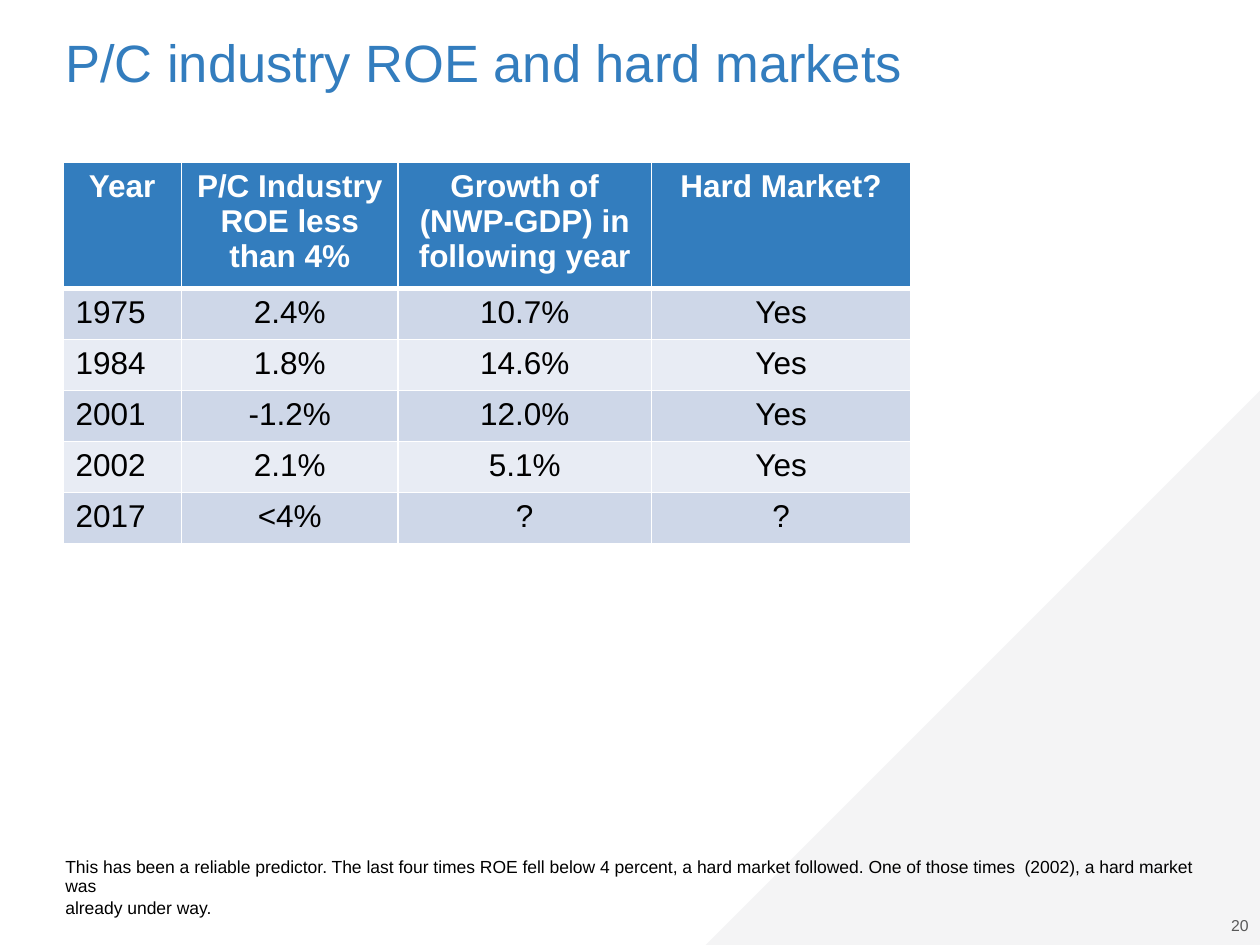
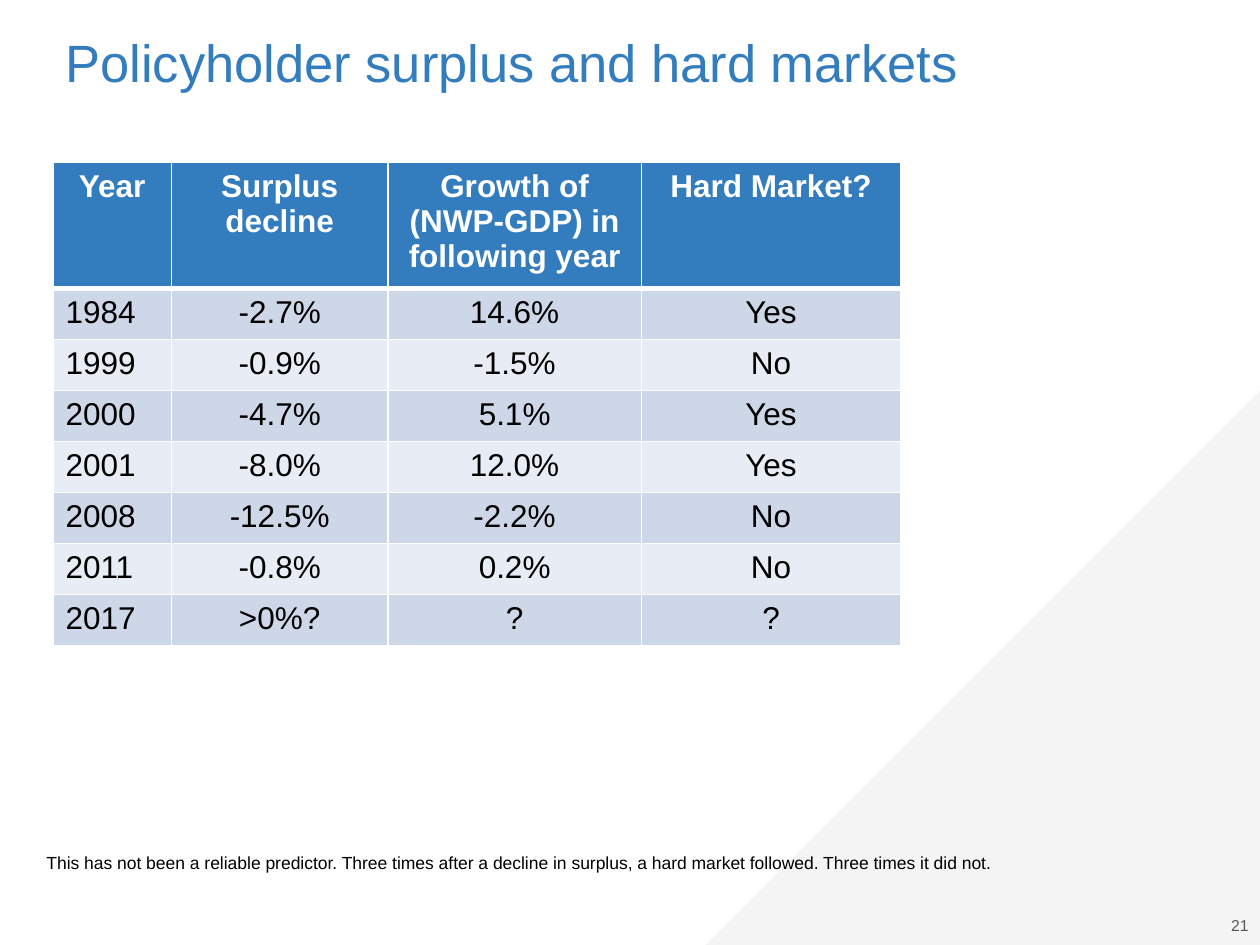
from lxml.etree import SubElement
from pptx import Presentation
from pptx.dml.color import RGBColor
from pptx.enum.shapes import MSO_SHAPE as Shape
from pptx.enum.text import MSO_ANCHOR as Anchor, PP_ALIGN as Align
from pptx.oxml import parse_xml
from pptx.oxml.ns import nsdecls, qn
from pptx.util import Inches, Pt

BLUE = RGBColor(0x33, 0x7D, 0xBE)
BAND_DARK = RGBColor(0xCE, 0xD7, 0xE8)
BAND_LIGHT = RGBColor(0xE8, 0xEC, 0xF4)
CORNER_GRAY = RGBColor(0xC6, 0xC6, 0xC9)
NUMBER_GRAY = RGBColor(0x40, 0x40, 0x40)
WHITE = RGBColor(0xFF, 0xFF, 0xFF)
BLACK = RGBColor(0, 0, 0)

TITLE = {"size": Pt(30), "color": BLUE}
NOTE = {"size": Pt(10), "color": BLACK}
NUMBER = {"size": Pt(9), "color": NUMBER_GRAY}
HEADER_CELL = {"size": Pt(18), "color": WHITE, "bold": True}
BODY_CELL = {"size": Pt(18), "color": BLACK, "bold": False}

TITLE_BOX = (0.42, 0.25, 9.25, 1.04)
NUMBER_BOX = (9.43, 7.29, 0.48, 0.13)
CORNER_BOX = (5.6, 3.1, 4.4, 4.4)
COLUMN_WIDTHS = (0.94, 1.72, 2.01, 2.06)
HEADER_HEIGHT = Inches(0.92)
ROW_HEIGHT = Inches(0.81) // 2

SLIDES = [
    {
        "number": "20",
        "title": "P/C industry ROE and hard markets",
        "table_at": (0.5, 1.29),
        "measure": "P/C Industry ROE less than 4%",
        "rows": [
            ("1975", "2.4%", "10.7%", "Yes"),
            ("1984", "1.8%", "14.6%", "Yes"),
            ("2001", "-1.2%", "12.0%", "Yes"),
            ("2002", "2.1%", "5.1%", "Yes"),
            ("2017", "<4%", "?", "?"),
        ],
        "note_box": (0.42, 6.76, 9.39, 0.45),
        "note": [
            "This has been a reliable predictor. The last four times ROE fell below 4 percent, "
            "a hard market followed. One of those times  (2002), a hard market was",
            "already under way.",
        ],
        "note_gap": Pt(2),
    },
    {
        "number": "21",
        "title": "Policyholder surplus and hard markets",
        "table_at": (0.42, 1.29),
        "measure": "Surplus decline",
        "rows": [
            ("1984", "-2.7%", "14.6%", "Yes"),
            ("1999", "-0.9%", "-1.5%", "No"),
            ("2000", "-4.7%", "5.1%", "Yes"),
            ("2001", "-8.0%", "12.0%", "Yes"),
            ("2008", "-12.5%", "-2.2%", "No"),
            ("2011", "-0.8%", "0.2%", "No"),
            ("2017", ">0%?", "?", "?"),
        ],
        "note_box": (0.27, 6.73, 8.09, 0.3),
        "note": [
            "This has not been a reliable predictor. Three times after a decline in surplus, "
            "a hard market followed. Three times it did not.",
        ],
        "note_gap": Pt(12),
    },
]


def write(para, text, style, **layout):
    """Add one styled run to a paragraph and set the paragraph's layout."""
    for name, value in layout.items():
        setattr(para, name, value)
    span = para.add_run()
    span.text = text
    span.font.name = "Arial"
    for name, value in style.items():
        if name == "color":
            span.font.color.rgb = value
        else:
            setattr(span.font, name, value)


def add_text(page, box, lines, style, frame_format=None, **layout):
    """Place a text box with one paragraph for each line."""
    frame = page.shapes.add_textbox(*map(Inches, box)).text_frame
    for name, value in {"word_wrap": True, **(frame_format or {})}.items():
        setattr(frame, name, value)
    for index, line in enumerate(lines):
        para = frame.add_paragraph() if index else frame.paragraphs[0]
        write(para, line, style, line_spacing=0.9, **layout)


def add_corner(page, box):
    """Place the pale triangle in the lower right corner."""
    corner = page.shapes.add_shape(Shape.RIGHT_TRIANGLE, *map(Inches, box))
    corner.shadow.inherit = False
    corner.rotation = 270
    corner.line.fill.background()
    corner.fill.solid()
    corner.fill.fore_color.rgb = CORNER_GRAY
    color = corner._element.spPr.find(qn("a:solidFill"))[0]
    SubElement(color, qn("a:alpha"), val="18000")


def add_borders(cell, top, bottom):
    """Draw white cell borders with the given top and bottom widths in points."""
    properties = cell._tc.get_or_add_tcPr()
    for side, width in (("L", 1), ("R", 1), ("T", top), ("B", bottom)):
        properties.append(parse_xml(
            f'<a:ln{side} {nsdecls("a")} w="{Pt(width)}"><a:solidFill>'
            f'<a:srgbClr val="{WHITE}"/></a:solidFill></a:ln{side}>'))


def add_market_table(page, position, measure, rows):
    """Place the banded table of years, measure, growth and outcome."""
    header = ("Year", measure, "Growth of (NWP-GDP) in following year", "Hard Market?")
    records = [header, *rows]
    left, top = map(Inches, position)
    height = HEADER_HEIGHT + ROW_HEIGHT * len(rows)
    table = page.shapes.add_table(
        len(records), len(header), left, top, Inches(sum(COLUMN_WIDTHS)), height).table
    for column, width in zip(table.columns, COLUMN_WIDTHS):
        column.width = Inches(width)
    for r, record in enumerate(records):
        table.rows[r].height = ROW_HEIGHT if r else HEADER_HEIGHT
        band = (BAND_DARK if r % 2 else BAND_LIGHT) if r else BLUE
        for c, text in enumerate(record):
            cell = table.cell(r, c)
            add_borders(cell, top=3 if r == 1 else 1, bottom=1 if r else 3)
            cell.fill.solid()
            cell.fill.fore_color.rgb = band
            write(cell.text_frame.paragraphs[0], text, BODY_CELL if r else HEADER_CELL,
                  alignment=Align.LEFT if r and c == 0 else Align.CENTER)


def add_frame(page, number, title):
    """Place the page number, corner and title that every slide shares."""
    margins = dict.fromkeys(
        ("margin_left", "margin_top", "margin_right", "margin_bottom"), 0)
    add_text(page, NUMBER_BOX, [number], NUMBER,
             {"vertical_anchor": Anchor.BOTTOM, **margins}, alignment=Align.RIGHT)
    add_corner(page, CORNER_BOX)
    add_text(page, TITLE_BOX, [title], TITLE)


def main():
    """Build and save the deck."""
    deck = Presentation()
    deck.slide_width, deck.slide_height = Inches(10), Inches(7.5)
    for content in SLIDES:
        page = deck.slides.add_slide(deck.slide_layouts[6])
        add_frame(page, content["number"], content["title"])
        add_market_table(page, content["table_at"], content["measure"], content["rows"])
        add_text(page, content["note_box"], content["note"], NOTE,
                 {"word_wrap": False}, space_before=content["note_gap"])
    deck.save("out.pptx")


if __name__ == "__main__":
    main()
